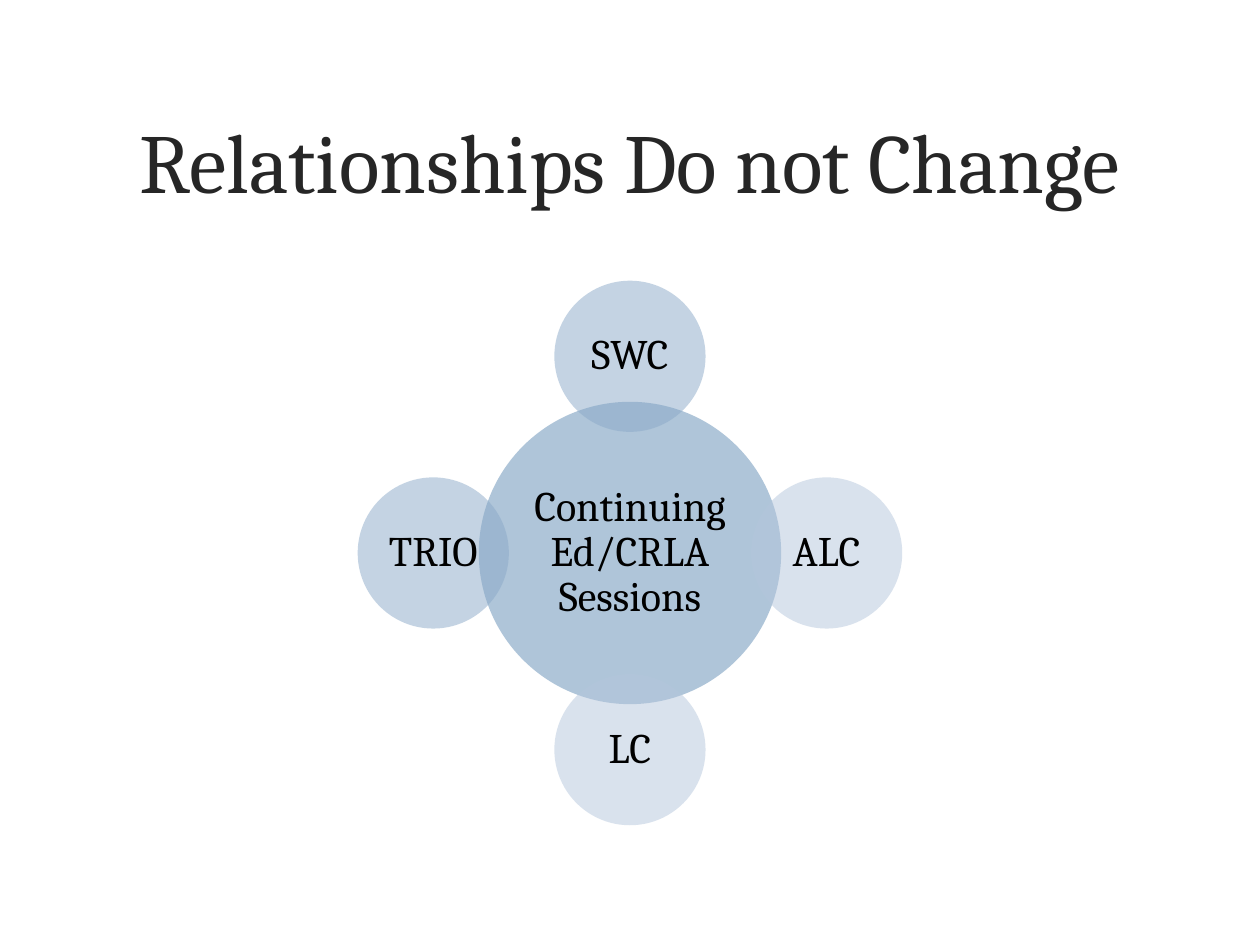
from lxml import etree
from pptx import Presentation
from pptx.dml.color import RGBColor
from pptx.enum.shapes import MSO_SHAPE
from pptx.enum.text import MSO_ANCHOR, MSO_AUTO_SIZE, PP_ALIGN
from pptx.oxml.ns import qn
from pptx.util import Pt

FONT = "Cambria"
TITLE_COLOR = RGBColor(0x26, 0x26, 0x26)
TEXT_COLOR = RGBColor(0x00, 0x00, 0x00)
HUB_COLOR = RGBColor(0x61, 0x8D, 0xB5)
MID_COLOR = RGBColor(0x8A, 0xA9, 0xC8)
LIGHT_COLOR = RGBColor(0xB4, 0xC6, 0xDC)

CENTER_X, CENTER_Y = 360, 316
HUB_SIZE, SATELLITE_SIZE = 172.8, 86.4
ORBIT = 112.4

# Label, colour, and direction from the hub
SATELLITES = [
    ("SWC", MID_COLOR, 0, -1),
    ("ALC", LIGHT_COLOR, 1, 0),
    ("LC", LIGHT_COLOR, 0, 1),
    ("TRIO", MID_COLOR, -1, 0),
]


def write_text(shape, text, size, color):
    frame = shape.text_frame
    frame.text = text
    frame.word_wrap = True
    frame.auto_size = MSO_AUTO_SIZE.NONE
    frame.vertical_anchor = MSO_ANCHOR.MIDDLE
    paragraph = frame.paragraphs[0]
    paragraph.alignment = PP_ALIGN.CENTER
    paragraph.font.name = FONT
    paragraph.font.size = Pt(size)
    paragraph.font.color.rgb = color
    return frame


def add_title(slide, text):
    title = slide.shapes.title
    title.left, title.top = Pt(43.2), Pt(34.6)
    title.width, title.height = Pt(633), Pt(113.8)
    write_text(title, text, 48, TITLE_COLOR)


def add_circle(slide, text, center_x, center_y, size, color):
    circle = slide.shapes.add_shape(
        MSO_SHAPE.OVAL, Pt(center_x - size / 2), Pt(center_y - size / 2),
        Pt(size), Pt(size))
    circle.shadow.inherit = False
    circle.line.fill.background()
    circle.fill.solid()
    circle.fill.fore_color.rgb = color
    # Half transparent fill
    color_element = circle.fill._xPr.find(".//" + qn("a:srgbClr"))
    etree.SubElement(color_element, qn("a:alpha"), val="50000")

    frame = write_text(circle, text, 24, TEXT_COLOR)
    frame.margin_left = frame.margin_right = Pt(2.4)
    frame.margin_top = frame.margin_bottom = Pt(2.4)
    frame.paragraphs[0].line_spacing = 0.9


def main():
    presentation = Presentation()
    presentation.slide_width, presentation.slide_height = Pt(720), Pt(540)
    slide = presentation.slides.add_slide(presentation.slide_layouts[5])
    add_title(slide, "Relationships Do not Change")

    # Hub, then the satellites around it
    add_circle(slide, "Continuing Ed/CRLA Sessions",
               CENTER_X, CENTER_Y, HUB_SIZE, HUB_COLOR)
    for label, color, step_x, step_y in SATELLITES:
        add_circle(slide, label, CENTER_X + step_x * ORBIT,
                   CENTER_Y + step_y * ORBIT, SATELLITE_SIZE, color)

    presentation.save("out.pptx")


if __name__ == "__main__":
    main()
